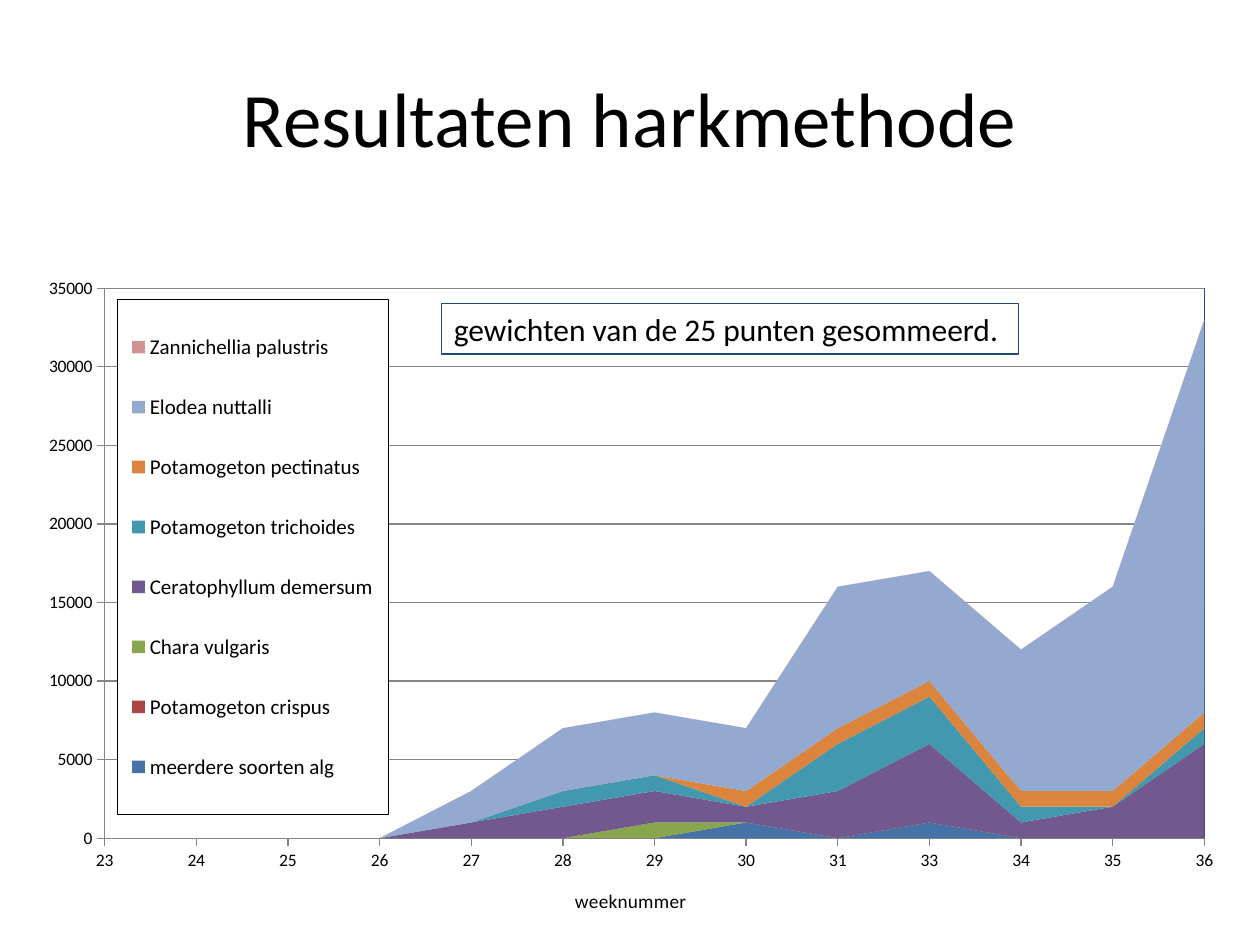
"""Build the slide with the summed rake-method weights as a stacked area chart."""
from lxml.etree import SubElement
from pptx import Presentation
from pptx.chart.data import CategoryChartData
from pptx.dml.color import RGBColor
from pptx.enum.chart import XL_CHART_TYPE, XL_LEGEND_POSITION, XL_TICK_MARK
from pptx.enum.shapes import MSO_SHAPE
from pptx.enum.text import MSO_ANCHOR, PP_ALIGN
from pptx.oxml import parse_xml
from pptx.oxml.ns import nsdecls, qn
from pptx.util import Cm, Pt

TITLE = "Resultaten harkmethode"
NOTE = "gewichten van de 25 punten gesommeerd."
AXIS_TITLE = "weeknummer"
WEEKS = ["23", "24", "25", "26", "27", "28", "29", "30", "31", "33", "34", "35", "36"]
EMPTY_WEEKS = [0] * 4
SERIES = [
    ("meerdere soorten alg", "4572A7", [0, 0, 0, 1000, 0, 1000, 0, 0, 0]),
    ("Potamogeton crispus", "AA4643", [0, 0, 0, 0, 0, 0, 0, 0, 0]),
    ("Chara vulgaris", "89A54E", [0, 0, 1000, 0, 0, 0, 0, 0, 0]),
    ("Ceratophyllum demersum", "71588F", [1000, 2000, 2000, 1000, 3000, 5000, 1000, 2000, 6000]),
    ("Potamogeton trichoides", "4198AF", [0, 1000, 1000, 0, 3000, 3000, 1000, 0, 1000]),
    ("Potamogeton pectinatus", "DB843D", [0, 0, 0, 1000, 1000, 1000, 1000, 1000, 1000]),
    ("Elodea nuttalli", "93A9CF", [2000, 4000, 4000, 4000, 9000, 7000, 9000, 13000, 25000]),
    ("Zannichellia palustris", "D19392", [0, 0, 0, 0, 0, 0, 0, 0, 0]),
]
CHART_W, CHART_H = Cm(25.4), Cm(14.33)
THEME = {
    "font": "Calibri", "text": "000000", "paper": "FFFFFF", "grid": "868686", "frame": "1F497D",
    "title": 44, "note": 18, "legend": 12, "axis_title": 11, "tick": 10,
}


def rgb(name):
    return RGBColor.from_string(THEME[name])


def style(font, size):
    font.name, font.size, font.bold = THEME["font"], Pt(THEME[size]), False
    font.color.rgb = rgb("text")


def write(tf, text, size, align):
    p = tf.paragraphs[0]
    p.alignment = align
    r = p.add_run()
    r.text = text
    style(r.font, size)


def layout(parent, index, inner=False, **place):
    for old in parent.findall(qn("c:layout")):
        parent.remove(old)
    box = parse_xml(f"<c:layout {nsdecls('c')}/>")
    manual = SubElement(box, qn("c:manualLayout"))
    values = {"layoutTarget": "inner"} if inner else {}
    values |= {"xMode": "edge", "yMode": "edge"}
    values |= {k: Cm(v) / (CHART_W if k in "xw" else CHART_H) for k, v in place.items()}
    for tag, value in values.items():
        SubElement(manual, qn(f"c:{tag}")).set("val", str(value))
    parent.insert(index, box)


def frame(line, width):
    return parse_xml(
        f'<c:spPr {nsdecls("c", "a")}><a:solidFill><a:srgbClr val="{THEME["paper"]}"/></a:solidFill>'
        f'<a:ln w="{Pt(width)}"><a:solidFill><a:srgbClr val="{THEME[line]}"/></a:solidFill></a:ln></c:spPr>')


def add_title(s):
    tf = s.shapes.add_textbox(Cm(1.27), Cm(0.76), Cm(22.86), Cm(3.18)).text_frame
    tf.word_wrap = True
    tf.vertical_anchor = MSO_ANCHOR.MIDDLE
    write(tf, TITLE, "title", PP_ALIGN.CENTER)


def add_weights(s):
    data = CategoryChartData()
    data.categories = WEEKS
    for name, _, weights in SERIES:
        data.add_series(name, EMPTY_WEEKS + weights)
    chart = s.shapes.add_chart(
        XL_CHART_TYPE.AREA_STACKED, Cm(0), Cm(4.72), CHART_W, CHART_H, data).chart
    chart.has_title = False
    style(chart.font, "tick")
    chart.plots[0].vary_by_categories = False
    for ser, (_, color, _) in zip(chart.plots[0].series, SERIES):
        ser.format.fill.solid()
        ser.format.fill.fore_color.rgb = RGBColor.from_string(color)

    cat, val = chart.category_axis, chart.value_axis
    for axis in (cat, val):
        axis.major_tick_mark = XL_TICK_MARK.OUTSIDE
        axis.minor_tick_mark = XL_TICK_MARK.NONE
        axis.format.line.color.rgb = rgb("grid")
        style(axis.tick_labels.font, "tick")
    cat.has_major_gridlines = False
    val.has_major_gridlines = True
    val.major_gridlines.format.line.color.rgb = rgb("grid")
    val.minimum_scale, val.maximum_scale, val.major_unit = 0, 35000, 5000
    val.tick_labels.number_format = "0"
    val.tick_labels.number_format_is_linked = False
    write(cat.axis_title.text_frame, AXIS_TITLE, "axis_title", PP_ALIGN.CENTER)
    layout(cat.axis_title._element, 1, x=11.52, y=13.1)

    chart.has_legend = True
    legend = chart.legend
    legend.position = XL_LEGEND_POSITION.CORNER
    legend.include_in_layout = True
    style(legend.font, "legend")
    layout(legend._element, 1, x=2.36, y=1.32, w=5.46, h=10.38)
    legend._element.find(qn("c:txPr")).addprevious(frame("text", 0.25))

    area = chart._chartSpace.chart.plotArea
    layout(area, 0, inner=True, x=2.11, y=1.09, w=22.17, h=11.09)
    area.append(frame("frame", 0.75))


def add_note(s):
    sp = s.shapes.add_shape(MSO_SHAPE.RECTANGLE, Cm(8.9), Cm(6.12), Cm(11.63), Cm(1.02))
    sp.shadow.inherit = False
    sp.fill.solid()
    sp.fill.fore_color.rgb = rgb("paper")
    sp.line.color.rgb = rgb("frame")
    sp.line.width = Pt(0.75)
    sp.text_frame.word_wrap = False
    write(sp.text_frame, NOTE, "note", PP_ALIGN.LEFT)


def main():
    prs = Presentation()
    prs.slide_width, prs.slide_height = Cm(25.4), Cm(19.05)
    s = prs.slides.add_slide(prs.slide_layouts[6])
    add_title(s)
    add_weights(s)
    add_note(s)
    prs.save("out.pptx")


if __name__ == "__main__":
    main()
